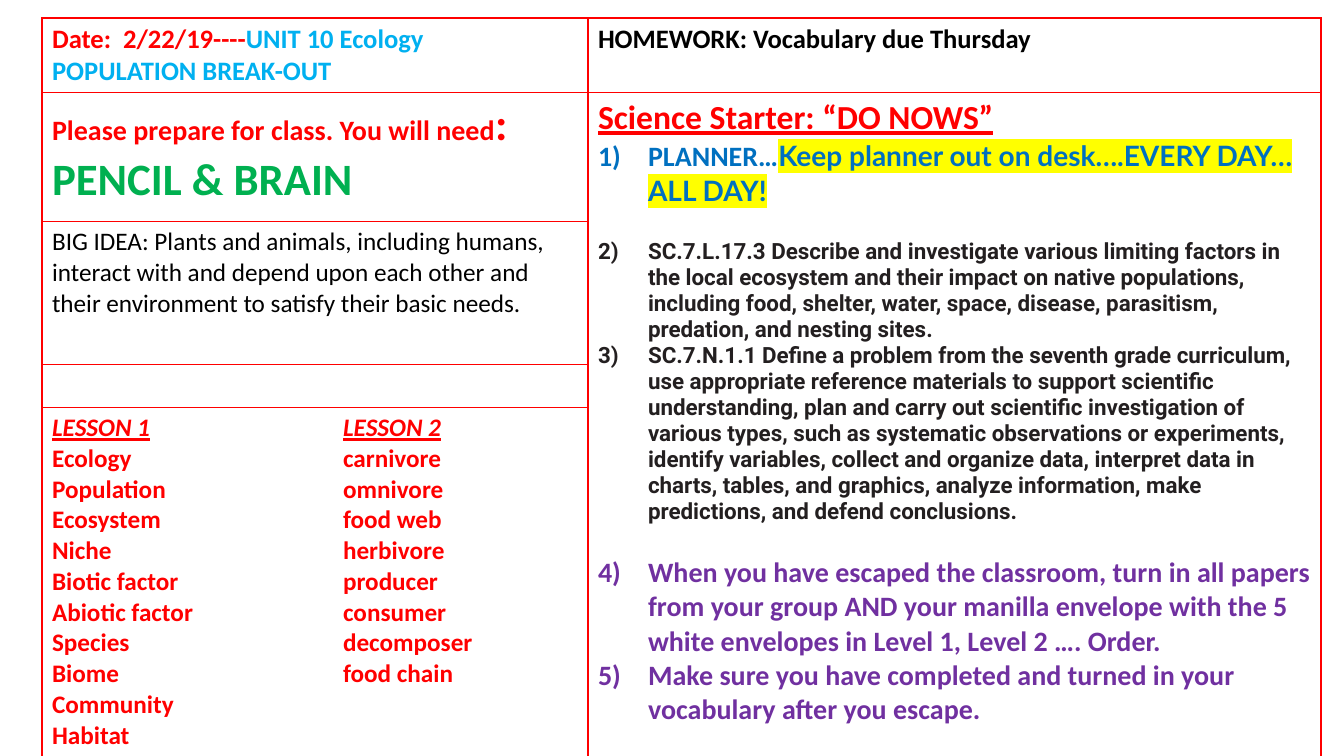
from pptx import Presentation
from pptx.dml.color import RGBColor
from pptx.oxml import parse_xml
from pptx.oxml.ns import nsdecls
from pptx.util import Pt

COLORS = {
    "red": "FF0000", "sky": "00B0F0", "black": "000000", "green": "00B050",
    "blue": "0070C0", "ink": "231F20", "purple": "7030A0", "yellow": "FFFF00",
}

LESSONS = [
    ("Ecology", "carnivore"), ("Population", "omnivore"),
    ("Ecosystem", "food web"), ("Niche", "herbivore"),
    ("Biotic factor", "producer"), ("Abiotic factor", "consumer"),
    ("Species", "decomposer"), ("Biome", "food chain"),
    ("Community",), ("Habitat",),
]

HEADER = dict(size=19, color="red")
SUPPLIES = dict(size=20, color="red")
PLANNER = dict(size=20, color="blue")
STANDARD = dict(size=16, color="ink", face="Roboto")
ESCAPE = dict(size=20, color="purple")
WORD = dict(size=18, color="red")
NUMBERED = dict(numbered=True)
NEW_GROUP = dict(numbered=True, gap=22)

CELLS = {
    (0, 0): [
        ([("Date:  2/22/19----", HEADER), ("UNIT 10 Ecology", HEADER | {"color": "sky"})], {}),
        ([("POPULATION BREAK-OUT", HEADER | {"color": "sky"})], {}),
    ],
    (0, 1): [([("HOMEWORK: Vocabulary due Thursday", HEADER | {"color": "black"})], {})],
    (1, 0): [([
        ("Please prepare for class. You will need", SUPPLIES),
        (":", SUPPLIES | {"size": 32}),
        (" PENCIL & BRAIN", dict(size=32, color="green")),
    ], {})],
    (1, 1): [
        ([("Science Starter: “DO NOWS”", dict(size=24, color="red", underline=True))], {}),
        ([("PLANNER…", PLANNER),
          ("Keep planner out on desk….EVERY DAY…ALL DAY!",
           PLANNER | {"face": "Lato", "highlight": "yellow"})], NUMBERED),
        ([("SC.7.L.17.3 Describe and investigate various limiting factors in the local "
           "ecosystem and their impact on native populations, including food, shelter, "
           "water, space, disease, parasitism, predation, and nesting sites.", STANDARD)],
         NEW_GROUP),
        ([("SC.7.N.1.1 Define a problem from the seventh grade curriculum, use appropriate "
           "reference materials to support scientific understanding, plan and carry out "
           "scientific investigation of various types, such as systematic observations or "
           "experiments, identify variables, collect and organize data, interpret data in "
           "charts, tables, and graphics, analyze information, make predictions, and defend "
           "conclusions.", STANDARD)], NUMBERED),
        ([("When you have escaped the classroom, turn in all papers from your group AND your "
           "manilla envelope with the 5 white envelopes in Level 1, Level 2 …. Order.",
           ESCAPE)], NEW_GROUP),
        ([("Make sure you have completed and turned in your vocabulary after you escape.",
           ESCAPE)], NUMBERED),
    ],
    (2, 0): [([(
        "BIG IDEA: Plants and animals, including humans, interact with and depend upon each "
        "other and their environment to satisfy their basic needs.",
        dict(size=18, color="black", bold=False))], {})],
    (4, 0): [([("LESSON 1\tLESSON 2", WORD | {"italic": True, "underline": True})],
              {"tab": 291})]
            + [([("\t".join(words), WORD)], {"tab": 291}) for words in LESSONS],
}

SLIDE_SIZE = (1344, 756)
LEFT, TOP = 42, 18
COLUMNS = [546, 733]
ROWS = [74, 129, 143, 43, 746, 297, 297]
HANGING = 50


def px(length):
    return int(length * 914400 / 100.8)


def format_run(run, size, color, face="Calibri", bold=True, italic=False,
               underline=False, highlight=None):
    font = run.font
    font.size, font.name = Pt(size), face
    font.bold, font.italic, font.underline = bold, italic, underline
    font.color.rgb = RGBColor.from_string(COLORS[color])
    if highlight:
        marker = parse_xml(f'<a:highlight {nsdecls("a")}>'
                           f'<a:srgbClr val="{COLORS[highlight]}"/></a:highlight>')
        font.fill._xPr.solidFill.addnext(marker)


def format_paragraph(paragraph, numbered=False, gap=0, tab=None):
    paragraph.space_before = Pt(gap)
    properties = paragraph._p.get_or_add_pPr()
    if numbered:
        properties.set("marL", str(px(HANGING)))
        properties.set("indent", str(-px(HANGING)))
        properties.append(parse_xml(f'<a:buAutoNum {nsdecls("a")} type="arabicParenR"/>'))
    if tab:
        properties.append(parse_xml(f'<a:tabLst {nsdecls("a")}>'
                                    f'<a:tab pos="{px(tab)}" algn="l"/></a:tabLst>'))


def write_cell(cell, paragraphs):
    frame = cell.text_frame
    for index, (pieces, layout) in enumerate(paragraphs):
        paragraph = frame.add_paragraph() if index else frame.paragraphs[0]
        format_paragraph(paragraph, **layout)
        for words, style in pieces:
            run = paragraph.add_run()
            run.text = words
            format_run(run, **style)


def outline_cell(cell):
    cell.fill.background()
    properties = cell._tc.get_or_add_tcPr()
    for index, side in enumerate(("lnL", "lnR", "lnT", "lnB")):
        properties.insert(index, parse_xml(
            f'<a:{side} {nsdecls("a")} w="12700"><a:solidFill>'
            f'<a:srgbClr val="{COLORS["red"]}"/></a:solidFill></a:{side}>'))


def main():
    deck = Presentation()
    deck.slide_width, deck.slide_height = map(px, SLIDE_SIZE)
    slide = deck.slides.add_slide(deck.slide_layouts[6])
    agenda = slide.shapes.add_table(
        len(ROWS), len(COLUMNS), px(LEFT), px(TOP), px(sum(COLUMNS)), px(sum(ROWS))).table
    agenda.first_row = agenda.horz_banding = False
    for column, width in zip(agenda.columns, COLUMNS):
        column.width = px(width)
    for row, height in zip(agenda.rows, ROWS):
        row.height = px(height)
    for cell in agenda.iter_cells():
        outline_cell(cell)
    agenda.cell(1, 1).merge(agenda.cell(4, 1))
    for position, paragraphs in CELLS.items():
        write_cell(agenda.cell(*position), paragraphs)
    deck.save("out.pptx")


if __name__ == "__main__":
    main()
